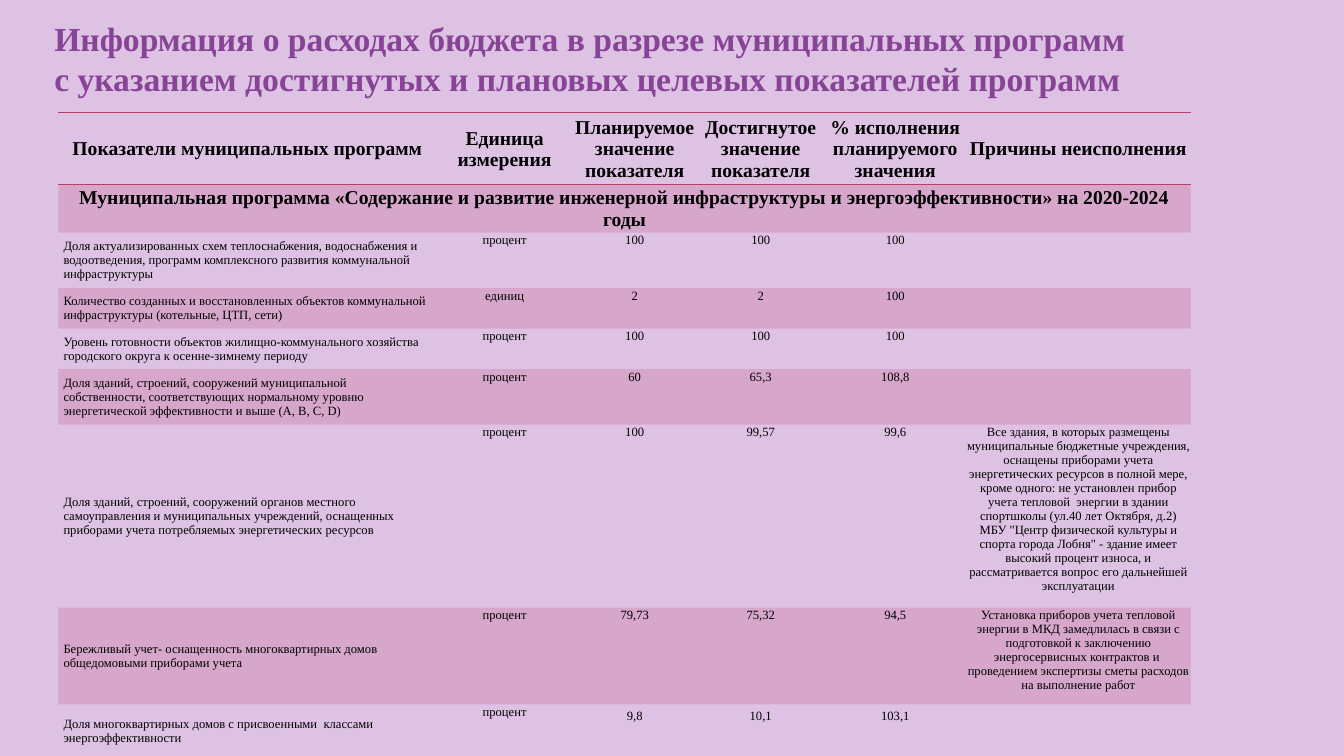
"""Builds a slide with the target indicators of a municipal programme."""
import lxml.etree
import pptx
import pptx.dml.color
import pptx.enum.text
import pptx.oxml.ns
import pptx.util

Inches = pptx.util.Inches
CENTER = pptx.enum.text.PP_ALIGN.CENTER
LEFT = pptx.enum.text.PP_ALIGN.LEFT
MIDDLE = pptx.enum.text.MSO_ANCHOR.MIDDLE
TOP = pptx.enum.text.MSO_ANCHOR.TOP

COLORS = {"background": "DEC2E4", "title": "874396", "text": "000000", "accent": "B83D68"}
FONT = "Times New Roman"
NO_STYLE = "{2D5ABB26-0587-4C30-8999-92F81FD0307C}"
TIGHT = (0.01, 0.01, 0.01, 0)
ROOMY = (0.05, 0.05, 0.05, 0.05)

TITLE = (
    "Информация о расходах бюджета в разрезе муниципальных программ \v"
    "с указанием достигнутых и плановых целевых показателей программ"
)
COLUMN_WIDTHS = [3.75, 1.35, 1.23, 1.27, 1.4, 2.23]
ROW_HEIGHTS = [0.69, 0.46, 0.53, 0.39, 0.39, 0.53, 1.77, 0.96, 0.53]
HEADERS = [
    "Показатели муниципальных программ",
    "Единица измерения",
    "Планируемое значение показателя",
    "Достигнутое значение показателя",
    "% исполнения планируемого значения",
    "Причины неисполнения",
]
PROGRAMME = (
    "Муниципальная программа «Содержание и развитие инженерной инфраструктуры "
    "и энергоэффективности» на 2020-2024 годы"
)
INDICATORS = [
    ("Доля актуализированных схем теплоснабжения, водоснабжения и водоотведения, "
     "программ комплексного развития коммунальной инфраструктуры",
     "процент", "100", "100", "100", ""),
    ("Количество созданных и восстановленных объектов коммунальной инфраструктуры "
     "(котельные, ЦТП, сети)",
     "единиц", "2", "2", "100", ""),
    ("Уровень готовности объектов жилищно-коммунального хозяйства городского округа "
     "к осенне-зимнему периоду",
     "процент", "100", "100", "100", ""),
    ("Доля зданий, строений, сооружений муниципальной собственности, соответствующих "
     "нормальному уровню энергетической эффективности и выше (А, В, С, D)",
     "процент", "60", "65,3", "108,8", ""),
    ("Доля зданий, строений, сооружений органов местного самоуправления и муниципальных "
     "учреждений, оснащенных приборами учета потребляемых энергетических ресурсов",
     "процент", "100", "99,57", "99,6",
     "Все здания, в которых размещены муниципальные бюджетные учреждения, оснащены "
     "приборами учета энергетических ресурсов в полной мере, кроме одного: не установлен "
     "прибор учета тепловой  энергии в здании спортшколы (ул.40 лет Октября, д.2) "
     'МБУ "Центр физической культуры и спорта города Лобня" - здание имеет высокий '
     "процент износа, и рассматривается вопрос его дальнейшей эксплуатации"),
    ("Бережливый учет- оснащенность многоквартирных домов общедомовыми приборами учета",
     "процент", "79,73", "75,32", "94,5",
     "Установка приборов учета тепловой энергии в МКД замедлилась в связи с подготовкой "
     "к заключению энергосервисных контрактов и  проведением экспертизы сметы расходов "
     "на выполнение работ"),
    ("Доля многоквартирных домов с присвоенными  классами энергоэффективности",
     "процент", "9,8", "10,1", "103,1", ""),
]


def write_text(paragraph, text, size=9, color="text", bold=False, align=LEFT):
    paragraph.alignment = align
    paragraph.text = text
    for run in paragraph.runs:
        run.font.name = FONT
        run.font.size = pptx.util.Pt(size)
        run.font.bold = bold
        run.font.color.rgb = pptx.dml.color.RGBColor.from_string(COLORS[color])


class IndicatorSlide:
    """Holds the style and the current slide."""

    def __init__(self, presentation):
        self.slide = presentation.slides.add_slide(presentation.slide_layouts[6])
        self.paint(self.slide.background.fill, "background")

    def paint(self, fill, color):
        fill.solid()
        fill.fore_color.rgb = pptx.dml.color.RGBColor.from_string(COLORS[color])

    def add_title(self, text, left, top, width, height):
        shape = self.slide.shapes.add_textbox(
            Inches(left), Inches(top), Inches(width), Inches(height))
        shape.text_frame.word_wrap = True
        write_text(shape.text_frame.paragraphs[0], text, size=24, color="title", bold=True)

    def add_table(self, left, top, column_widths, row_heights):
        frame = self.slide.shapes.add_table(
            len(row_heights), len(column_widths), Inches(left), Inches(top),
            Inches(sum(column_widths)), Inches(sum(row_heights)))
        frame.element.xpath(".//a:tableStyleId")[0].text = NO_STYLE
        table = frame.table
        table.first_row = False
        table.horz_banding = False
        for column, width in zip(table.columns, column_widths):
            column.width = Inches(width)
        for row, height in zip(table.rows, row_heights):
            row.height = Inches(height)
        return table

    def fill_cell(self, cell, text, anchor=TOP, insets=TIGHT, align=CENTER, **font):
        if not text:
            return
        cell.vertical_anchor = anchor
        cell.margin_left, cell.margin_top, cell.margin_right, cell.margin_bottom = map(
            Inches, insets)
        write_text(cell.text_frame.paragraphs[0], text, align=align, **font)

    def add_borders(self, cell, sides):
        properties = cell._tc.get_or_add_tcPr()
        for side in sides:
            line = lxml.etree.SubElement(
                properties, pptx.oxml.ns.qn(f"a:ln{side}"), w=str(pptx.util.Pt(1)))
            solid = lxml.etree.SubElement(line, pptx.oxml.ns.qn("a:solidFill"))
            lxml.etree.SubElement(
                solid, pptx.oxml.ns.qn("a:srgbClr"), val=COLORS["accent"])

    def add_band(self, cell):
        self.paint(cell.fill, "accent")
        color = cell._tc.tcPr.xpath("./a:solidFill/a:srgbClr")[0]
        lxml.etree.SubElement(color, pptx.oxml.ns.qn("a:alpha"), val="20000")

    def add_indicators(self, left, top):
        table = self.add_table(left, top, COLUMN_WIDTHS, ROW_HEIGHTS)
        heading = {"anchor": MIDDLE, "size": 14, "bold": True}
        last_row = len(ROW_HEIGHTS) - 1
        for column, header in enumerate(HEADERS):
            self.fill_cell(table.cell(0, column), header, **heading)
            self.add_borders(table.cell(0, column), "TB")
            self.add_borders(table.cell(last_row, column), "B")
        table.cell(1, 0).merge(table.cell(1, len(HEADERS) - 1))
        self.fill_cell(table.cell(1, 0), PROGRAMME, **heading)
        for row, values in enumerate(INDICATORS, start=2):
            name, *others = values
            self.fill_cell(table.cell(row, 0), name, anchor=MIDDLE, insets=ROOMY, align=LEFT)
            for column, value in enumerate(others, start=1):
                roomy = row == last_row and column > 1
                self.fill_cell(
                    table.cell(row, column), value, insets=ROOMY if roomy else TIGHT)
        for row in range(1, last_row, 2):
            for column in range(len(HEADERS)):
                self.add_band(table.cell(row, column))


def main():
    presentation = pptx.Presentation()
    presentation.slide_width = Inches(13.33)
    presentation.slide_height = Inches(7.5)
    page = IndicatorSlide(presentation)
    page.add_title(TITLE, 0.44, 0.13, 11.24, 0.91)
    page.add_indicators(0.58, 1.12)
    presentation.save("out.pptx")


if __name__ == "__main__":
    main()
